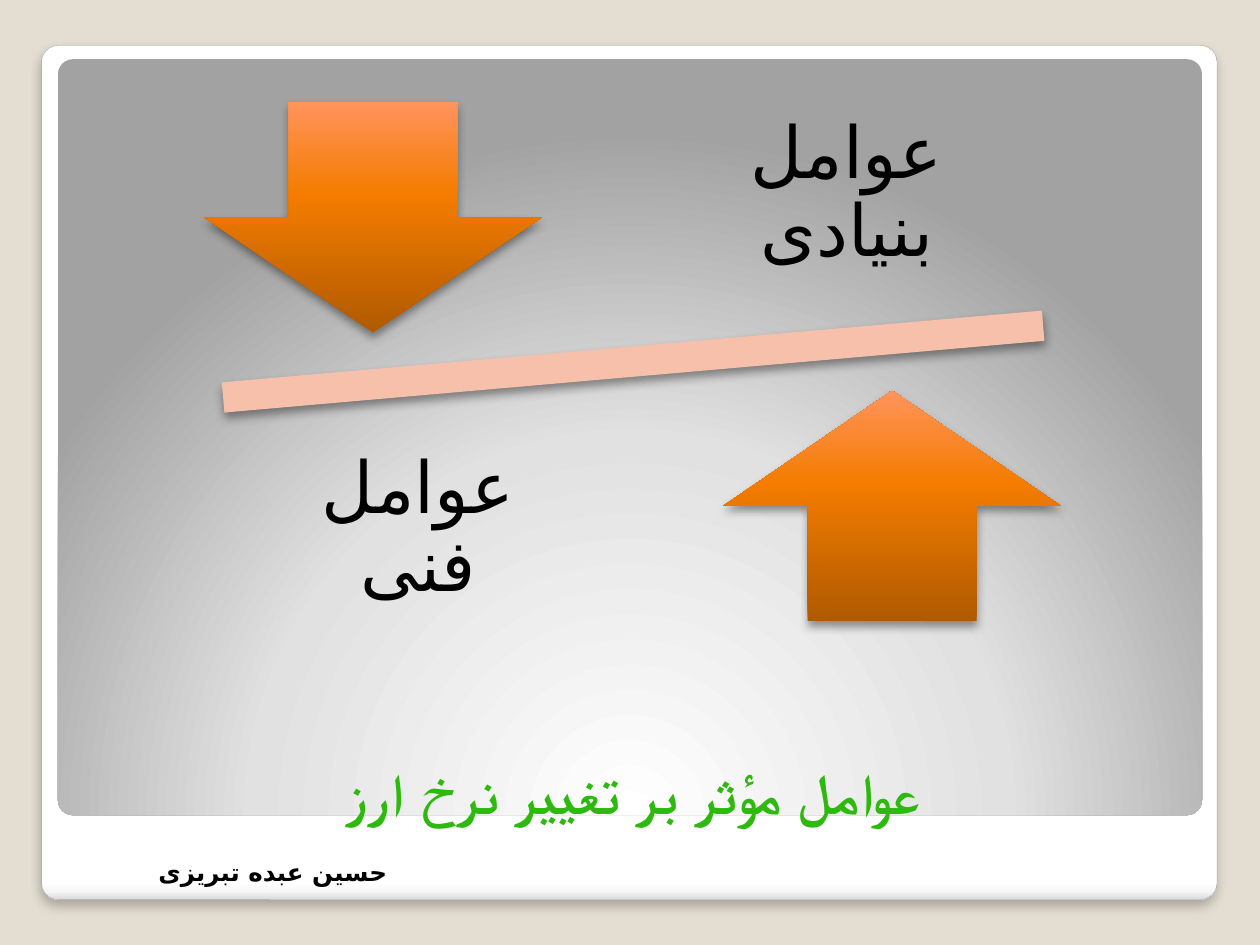
import pptx
import pptx.util
import pptx.dml.color
import pptx.enum.shapes
import pptx.enum.text
import pptx.oxml
import pptx.oxml.ns

Inches, Pt = pptx.util.Inches, pptx.util.Pt
RGB = pptx.dml.color.RGBColor
KIND = pptx.enum.shapes.MSO_SHAPE
ALIGN = pptx.enum.text.PP_ALIGN
ANCHOR = pptx.enum.text.MSO_ANCHOR
NS = pptx.oxml.ns.nsdecls("a")
FONT = "DejaVu Sans"

SAND = RGB(0xE3, 0xDE, 0xD1)
GREY = RGB(0xA4, 0xA4, 0xA4)
PEACH = RGB(0xF6, 0xC0, 0xAB)
GREEN = RGB(0x2D, 0xB9, 0x0E)
BLACK = RGB(0, 0, 0)

WHITES = [(0, "FFFFFF"), (98, "FFFFFF"), (99, "F7F7F7"), (100, "DADADA")]
GREYS = [(0, "FFFFFF"), (55, "E1E1E1"), (100, "A2A2A2")]
ORANGES = [(0, "B05A00"), (60, "F47C00"), (100, "FF945C")]
DOWN = '<a:lin ang="5400000" scaled="0"/>'
UP = '<a:lin ang="16200000" scaled="0"/>'
GLOW = ('<a:path path="circle"><a:fillToRect l="50000" t="175000" '
        'r="50000" b="-75000"/></a:path>')

ARROWS = [(KIND.DOWN_ARROW, 1.62, 0.81), (KIND.UP_ARROW, 5.74, 3.1)]
LABELS = [("عوامل بنیادی", 5.29, 0.58), ("عوامل فنی", 1.89, 3.24)]
TITLE = "عوامل مؤثر بر تغییر نرخ ارز"
AUTHOR = "حسین عبده تبریزی"


def blend(shape, stops, way):
    """Fill a shape with a gradient of several stops."""
    shape.fill.gradient()
    old = shape._element.spPr.find(pptx.oxml.ns.qn("a:gradFill"))
    marks = "".join(f'<a:gs pos="{pos * 1000}"><a:srgbClr val="{tone}"/></a:gs>'
                    for pos, tone in stops)
    new = pptx.oxml.parse_xml(f'<a:gradFill {NS} rotWithShape="1">'
                              f"<a:gsLst>{marks}</a:gsLst>{way}</a:gradFill>")
    old.getparent().replace(old, new)


def shade(shape, alpha=40, blur=5.2, dist=3):
    """Give a shape a soft shadow below it."""
    old = shape._element.spPr.find(pptx.oxml.ns.qn("a:effectLst"))
    old.append(pptx.oxml.parse_xml(
        f'<a:outerShdw {NS} blurRad="{Pt(blur)}" dist="{Pt(dist)}" '
        'dir="5400000" algn="tl" rotWithShape="0"><a:srgbClr val="000000">'
        f'<a:alpha val="{alpha * 1000}"/></a:srgbClr></a:outerShdw>'))


def draw(kind, *box):
    shape = slide.shapes.add_shape(kind, *map(Inches, box))
    shape.shadow.inherit = False
    shape.line.fill.background()
    return shape


def frame_free(left, top, wide, high):
    """Build a clear four-sided outline that holds text."""
    pen = slide.shapes.build_freeform(Inches(left), Inches(top))
    right, low = left + wide, top + high
    pen.add_line_segments([(Inches(x), Inches(y)) for x, y in
                           ((right, top), (right, low), (left, low))])
    shape = pen.convert_to_shape()
    shape.shadow.inherit = False
    shape.fill.background()
    shape.line.fill.background()
    return shape


def write(text, shape, size, color=BLACK, bold=False, inset=(0.1, 0.05),
          anchor=ANCHOR.TOP, space=1.0, script=FONT):
    frame = shape.text_frame
    frame.word_wrap = True
    frame.vertical_anchor = anchor
    frame.margin_left = frame.margin_right = Inches(inset[0])
    frame.margin_top = frame.margin_bottom = Inches(inset[1])
    para = frame.paragraphs[0]
    para.alignment = ALIGN.CENTER
    para.line_spacing = space
    para._p.get_or_add_pPr().set("rtl", "1")
    run = para.add_run()
    run.text = text
    run.font.name, run.font.size, run.font.bold = FONT, Pt(size), bold
    run.font.color.rgb = color
    if script:
        run._r.get_or_add_rPr().append(
            pptx.oxml.parse_xml(f'<a:cs {NS} typeface="{script}"/>'))


def place(*box):
    return slide.shapes.add_textbox(*map(Inches, box))


deck = pptx.Presentation()
deck.slide_width, deck.slide_height = Inches(10), Inches(7.5)
slide = deck.slides.add_slide(deck.slide_layouts[6])
slide.background.fill.solid()
slide.background.fill.fore_color.rgb = SAND

card = draw(KIND.ROUNDED_RECTANGLE, 0.33, 0.36, 9.33, 6.78)
blend(card, WHITES, DOWN)
card.line.color.rgb = GREY
card.line.width = Pt(0.16)
shade(card, alpha=25, blur=6, dist=4)
panel = draw(KIND.ROUNDED_RECTANGLE, 0.46, 0.47, 9.08, 6)
blend(panel, GREYS, GLOW)
for shape in (card, panel):
    shape.adjustments[0] = 0.02

write(AUTHOR, place(0.58, 6.75, 3.17, 0.34), size=14, bold=True)
write(TITLE, place(0.55, 5.45, 8.95, 1.15), size=32.4, color=GREEN, bold=True,
      anchor=ANCHOR.BOTTOM, script=None)

beam = draw(KIND.MATH_MINUS, 0.58, 2.36, 8.89, 1.02)
beam.rotation = 355
beam.fill.solid()
beam.fill.fore_color.rgb = PEACH
shade(beam)

for kind, left, top in ARROWS:
    arrow = draw(kind, left, top, 2.68, 1.83)
    blend(arrow, ORANGES, UP)
    shade(arrow)
for text, left, top in LABELS:
    write(text, frame_free(left, top, 2.86, 1.92), size=41,
          inset=(0.32, 0.32), anchor=ANCHOR.MIDDLE, space=0.9)

deck.save("out.pptx")
